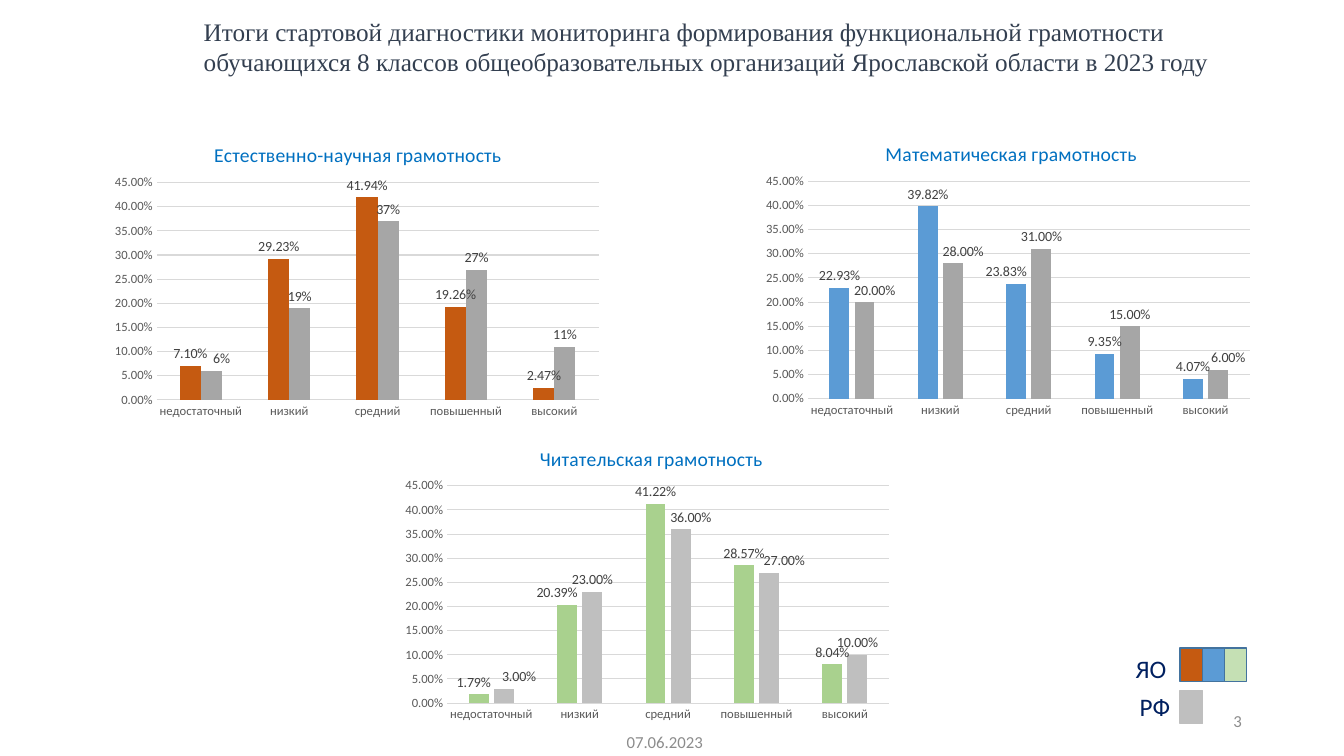
from lxml.etree import SubElement
from pptx import Presentation
from pptx.chart.data import CategoryChartData
from pptx.dml.color import RGBColor
from pptx.enum.chart import XL_CHART_TYPE as ChartType
from pptx.enum.chart import XL_LABEL_POSITION as LabelPosition
from pptx.enum.chart import XL_TICK_MARK as TickMark
from pptx.enum.shapes import MSO_SHAPE as Shape
from pptx.enum.text import MSO_ANCHOR as Anchor
from pptx.enum.text import MSO_AUTO_SIZE as AutoSize
from pptx.enum.text import PP_ALIGN as Align
from pptx.oxml import parse_xml
from pptx.oxml.ns import nsdecls, qn
from pptx.util import Cm, Pt

ORANGE = RGBColor(0xC5, 0x5A, 0x11)
BLUE = RGBColor(0x5B, 0x9B, 0xD5)
GREEN = RGBColor(0xA9, 0xD1, 0x8E)
PALE_GREEN = RGBColor(0xC5, 0xE0, 0xB4)
GRAY = RGBColor(0xA6, 0xA6, 0xA6)
SILVER = RGBColor(0xBF, 0xBF, 0xBF)
HEADING_BLUE = RGBColor(0x00, 0x70, 0xC0)
NAVY = RGBColor(0x00, 0x20, 0x60)
SLATE = RGBColor(0x33, 0x3F, 0x50)
SWATCH_LINE = RGBColor(0x43, 0x73, 0x9E)
AXIS_TEXT = RGBColor(0x59, 0x59, 0x59)
LABEL_TEXT = RGBColor(0x40, 0x40, 0x40)
GRID = RGBColor(0xD9, 0xD9, 0xD9)
FOOTER = RGBColor(0x8C, 0x8C, 0x8C)

LEVELS = ["недостаточный", "низкий", "средний", "повышенный", "высокий"]
CHART_WIDTH, CHART_HEIGHT = 12.7, 7.62
SWATCH_WIDTH, SWATCH_HEIGHT = 0.56, 0.84
LEGEND_LEFT = 29.74


def style_font(font, size, color, name="Calibri"):
    font.name = name
    font.size = Pt(size)
    font.bold = False
    font.color.rgb = color


def write_text(holder, text, size=18, color=NAVY, font="Calibri",
               align=Align.LEFT, anchor=Anchor.TOP):
    frame = holder.text_frame
    frame.word_wrap = True
    frame.auto_size = AutoSize.NONE
    frame.vertical_anchor = anchor
    frame.text = text
    paragraph = frame.paragraphs[0]
    paragraph.alignment = align
    style_font(paragraph.runs[0].font, size, color, font)


def place(holder, left, top, width, height):
    holder.left, holder.top = Cm(left), Cm(top)
    holder.width, holder.height = Cm(width), Cm(height)


def add_note(slide, text, left, top, width, height=1.02, **text_format):
    note = slide.shapes.add_textbox(Cm(left), Cm(top), Cm(width), Cm(height))
    write_text(note, text, **text_format)


def add_swatch(slide, column, top, color, outline):
    swatch = slide.shapes.add_shape(
        Shape.RECTANGLE, Cm(LEGEND_LEFT + column * SWATCH_WIDTH), Cm(top),
        Cm(SWATCH_WIDTH), Cm(SWATCH_HEIGHT))
    swatch.shadow.inherit = False
    swatch.fill.solid()
    swatch.fill.fore_color.rgb = color
    swatch.line.color.rgb = outline
    swatch.line.width = Pt(1)


def make_layout(**values):
    layout = parse_xml(f"<c:layout {nsdecls('c')}/>")
    manual = SubElement(layout, qn("c:manualLayout"))
    for tag, value in values.items():
        SubElement(manual, qn(f"c:{tag}")).set("val", str(value))
    return layout


def replace_layout(parent, position, layout):
    for old in parent.findall(qn("c:layout")):
        parent.remove(old)
    parent.insert(position, layout)


def style_line(line):
    line.color.rgb = GRID
    line.width = Pt(0.75)


def style_axes(chart):
    for axis in (chart.category_axis, chart.value_axis):
        axis.major_tick_mark = axis.minor_tick_mark = TickMark.NONE
        style_font(axis.tick_labels.font, 9, AXIS_TEXT)
    style_line(chart.category_axis.format.line)
    values = chart.value_axis
    values.minimum_scale, values.maximum_scale, values.major_unit = 0, 0.45, 0.05
    values.format.line.fill.background()
    values.has_major_gridlines = True
    style_line(values.major_gridlines.format.line)
    values.tick_labels.number_format = "0.00%"
    values.tick_labels.number_format_is_linked = False


def style_series(series, color, number_format, shifts):
    series.format.fill.solid()
    series.format.fill.fore_color.rgb = color
    series.invert_if_negative = False
    labels = series.data_labels
    labels.show_value = True
    labels.position = LabelPosition.OUTSIDE_END
    labels.number_format = number_format
    labels.number_format_is_linked = False
    style_font(labels.font, 10, LABEL_TEXT)
    for index, shift in shifts.items():
        label = series.points[index].data_label
        label.position = LabelPosition.OUTSIDE_END
        style_font(label.font, 10, LABEL_TEXT)
        element = series._element.xpath(f"c:dLbls/c:dLbl[c:idx/@val='{index}']")[0]
        replace_layout(element, 1, make_layout(x=shift, y=0))


def add_literacy_chart(slide, heading, heading_left, left, top, overlap, groups):
    data = CategoryChartData()
    data.categories = LEVELS
    for name, (values, _, number_format, _) in zip(("ЯО", "РФ"), groups):
        data.add_series(name, values, number_format)
    chart = slide.shapes.add_chart(
        ChartType.COLUMN_CLUSTERED, Cm(left), Cm(top),
        Cm(CHART_WIDTH), Cm(CHART_HEIGHT), data).chart
    style_font(chart.font, 10, RGBColor(0, 0, 0))
    chart.has_legend = False
    chart.has_title = True
    title = chart.chart_title
    title.text_frame.text = heading
    style_font(title.text_frame.paragraphs[0].runs[0].font, 14, HEADING_BLUE)
    title.include_in_layout = False
    replace_layout(title._element, 1, make_layout(
        xMode="edge", yMode="edge", x=heading_left, y=0.05))
    replace_layout(chart._chartSpace.chart.plotArea, 0, make_layout(
        layoutTarget="inner", xMode="edge", yMode="edge",
        x=0.103, y=0.197, w=0.877, h=0.719))
    style_axes(chart)
    plot = chart.plots[0]
    plot.vary_by_categories = False
    plot.gap_width = 219
    plot.overlap = overlap
    for series, (_, color, number_format, shifts) in zip(plot.series, groups):
        style_series(series, color, number_format, shifts)


def main():
    deck = Presentation()
    deck.slide_width, deck.slide_height = Cm(33.87), Cm(19.05)
    slide = deck.slides.add_slide(deck.slide_layouts[5])

    place(slide.shapes.title, 4.88, 0.28, 27.46, 1.8)
    write_text(
        slide.shapes.title,
        "Итоги стартовой диагностики мониторинга формирования функциональной "
        "грамотности обучающихся 8 классов общеобразовательных организаций "
        "Ярославской области в 2023 году",
        color=SLATE, font="Times New Roman")

    add_literacy_chart(slide, "Естественно-научная грамотность", 0.21, 2.64, 3.1, 0, [
        ([0.071, 0.2923, 0.4194, 0.1926, 0.0247], ORANGE, "0.00%", {}),
        ([0.06, 0.19, 0.37, 0.27, 0.11], GRAY, "0%", {0: 0.02}),
    ])
    add_literacy_chart(slide, "Математическая грамотность", 0.25, 19.05, 3.07, -27, [
        ([0.2293, 0.3982, 0.2383, 0.0935, 0.0407], BLUE, "0.00%", {2: -0.02}),
        ([0.2, 0.28, 0.31, 0.15, 0.06], GRAY, "0.00%",
         {0: 0.02, 1: 0.02, 4: 0.02}),
    ])
    add_literacy_chart(slide, "Читательская грамотность", 0.28, 9.96, 10.74, -27, [
        ([0.0179, 0.2039, 0.4122, 0.2857, 0.0804], GREEN, "0.00%",
         {0: -0.01, 1: -0.02}),
        ([0.03, 0.23, 0.36, 0.27, 0.1], SILVER, "0.00%",
         {0: 0.03, 2: 0.02, 3: 0.03}),
    ])

    add_note(slide, "ЯО", 28.37, 16.33, 4.04)
    for column, color in enumerate((ORANGE, BLUE, PALE_GREEN)):
        add_swatch(slide, column, 16.33, color, SWATCH_LINE)
    add_swatch(slide, 0, 17.4, SILVER, SILVER)
    add_note(slide, "РФ", 28.47, 17.3, 1.55)

    add_note(slide, "07.06.2023", 9.58, 18.19, 14.35, size=12, color=FOOTER,
             align=Align.CENTER, anchor=Anchor.MIDDLE)
    add_note(slide, "3", 23.93, 17.65, 7.62, size=12, color=FOOTER,
             align=Align.RIGHT, anchor=Anchor.MIDDLE)
    deck.save("out.pptx")


if __name__ == "__main__":
    main()
